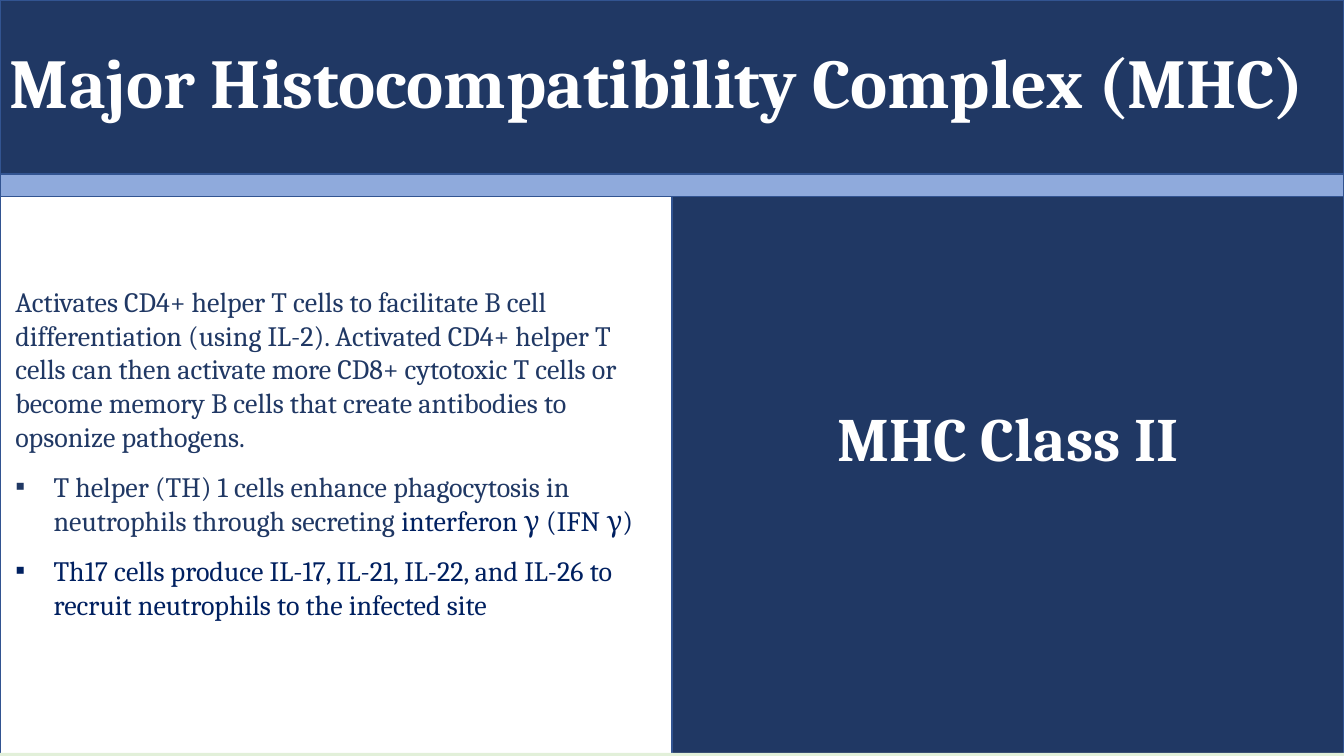
from pptx import Presentation
from pptx.dml.color import RGBColor
from pptx.enum.shapes import MSO_SHAPE as Shape
from pptx.enum.text import PP_ALIGN as Align
from pptx.oxml.xmlchemy import OxmlElement as Element
from pptx.util import Inches, Pt

WIDE, HIGH = 13.33, 7.5
NAVY = RGBColor(0x20, 0x38, 0x64)
DEEP = RGBColor(0x00, 0x20, 0x60)
EDGE = RGBColor(0x32, 0x54, 0x91)
SKY = RGBColor(0x8F, 0xAA, 0xDC)
MINT = RGBColor(0xE2, 0xF0, 0xD9)
WHITE = RGBColor(0xFF, 0xFF, 0xFF)

# Rows and columns as shares of the slide's size
HALF = 0.5
HEAD = 0.25
BAND = 0.23
FOOT = 0.996

HEADING = {"size": Pt(50), "bold": True}
LABEL = {"size": Pt(44), "bold": True}
BODY = {"size": Pt(20)}
INDENT = Inches(0.38)

# Each paragraph: bulleted or not, then its runs with their colours
POINTS = [
    (False, [("Activates CD4+ helper T cells to facilitate B cell differentiation "
              "(using IL-2). Activated CD4+ helper T cells can then activate more "
              "CD8+ cytotoxic T cells or become memory B cells that create "
              "antibodies to opsonize pathogens.", NAVY)]),
    (True, [("T helper (TH) 1 cells enhance phagocytosis in neutrophils through "
             "secreting ", NAVY), ("interferon γ (IFN γ)", DEEP)]),
    (True, [("Th17 cells produce IL-17, IL-21, IL-22, and IL-26 to recruit "
             "neutrophils to the infected site", DEEP)]),
]


def place(left, top, width, height):
    return (Inches(left * WIDE), Inches(top * HIGH),
            Inches(width * WIDE), Inches(height * HIGH))


def add_panel(slide, box, fill, edge=EDGE):
    panel = slide.shapes.add_shape(Shape.RECTANGLE, *place(*box))
    panel.shadow.inherit = False
    panel.fill.solid()
    panel.fill.fore_color.rgb = fill
    if edge is None:
        panel.line.fill.background()
    else:
        panel.line.color.rgb = edge
        panel.line.width = Pt(1)


def add_frame(slide, box):
    frame = slide.shapes.add_textbox(*place(*box)).text_frame
    frame.word_wrap = True
    return frame


def add_run(para, text, color, style):
    run = para.add_run()
    run.text = text
    run.font.name = "Cambria"
    run.font.color.rgb = color
    for name, value in style.items():
        setattr(run.font, name, value)


def add_title(slide, box, text, style, align=Align.LEFT):
    para = add_frame(slide, box).paragraphs[0]
    para.alignment = align
    add_run(para, text, WHITE, style)


def set_bullet(para):
    props = para._p.get_or_add_pPr()
    props.set("marL", str(INDENT))
    props.set("indent", str(-INDENT))
    for tag, key, value in (("a:buFont", "typeface", "Wingdings"),
                            ("a:buChar", "char", "▪")):
        if tag == "a:buFont":
            value = "Arial"
        part = Element(tag)
        part.set(key, value)
        props.append(part)


def add_points(slide, box, points):
    frame = add_frame(slide, box)
    for index, (marked, runs) in enumerate(points):
        para = frame.add_paragraph() if index else frame.paragraphs[0]
        para.space_after = Pt(12)
        if marked:
            set_bullet(para)
        for text, color in runs:
            add_run(para, text, color, BODY)


def main():
    deck = Presentation()
    deck.slide_width, deck.slide_height = Inches(WIDE), Inches(HIGH)
    slide = deck.slides.add_slide(deck.slide_layouts[6])

    # Two halves, header, band and footer strip
    add_panel(slide, (HALF, 0, HALF, 1), NAVY)
    add_panel(slide, (0, 0, HALF, 1), WHITE)
    add_panel(slide, (0, 0, 1, HEAD), NAVY)
    add_panel(slide, (0, BAND, 1, 0.03), SKY)
    add_panel(slide, (0, FOOT, 1, 1 - FOOT), MINT, None)

    # Wording
    add_title(slide, (0, 0.044, 1, 0.125),
              "Major Histocompatibility Complex (MHC)", HEADING)
    add_points(slide, (0.004, 0.37, 0.49, 0.53), POINTS)
    add_title(slide, (HALF, 0.523, HALF, 0.112), "MHC Class II",
              LABEL, Align.CENTER)

    deck.save("out.pptx")


if __name__ == "__main__":
    main()
